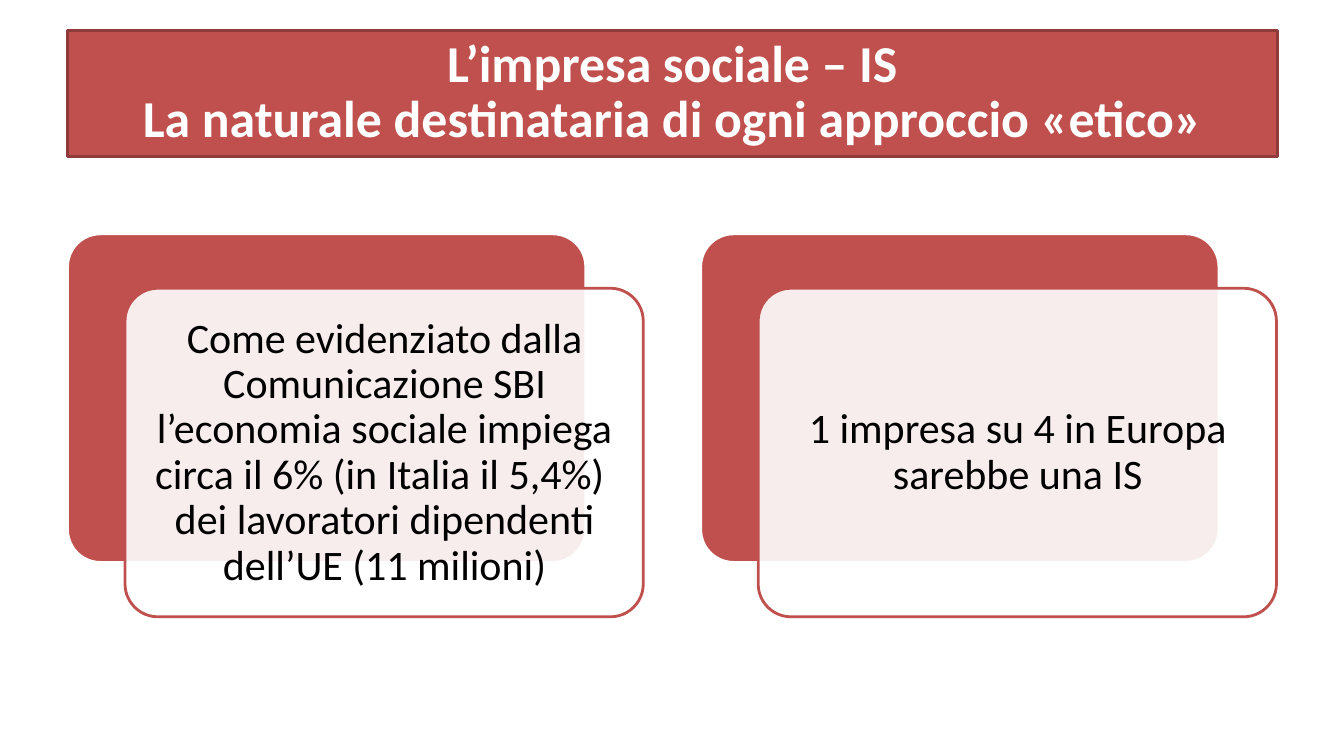
from lxml.etree import SubElement
from pptx import Presentation
from pptx.dml.color import RGBColor
from pptx.enum.shapes import MSO_SHAPE as Shape
from pptx.enum.text import MSO_ANCHOR as Anchor, MSO_AUTO_SIZE as Fit, PP_ALIGN as Align
from pptx.oxml.ns import qn
from pptx.util import Inches, Pt

RED = RGBColor(0xC0, 0x50, 0x4D)
DARK = RGBColor(0x8E, 0x3B, 0x39)
WHITE = RGBColor(0xFF, 0xFF, 0xFF)
BLACK = RGBColor(0x00, 0x00, 0x00)

TITLE = "L’impresa sociale – IS\nLa naturale destinataria di ogni approccio «etico»"
FACTS = [
    "Come evidenziato dalla Comunicazione SBI l’economia sociale impiega "
    "circa il 6% (in Italia il 5,4%)  dei lavoratori dipendenti dell’UE (11 milioni)",
    "1 impresa su 4 in Europa sarebbe una IS",
]


class Deck:
    """Draws the title and the layered cards in one shared style."""

    font = "Calibri"
    width, height = 5.14, 3.26

    def __init__(self, prs):
        self.slide = prs.slides.add_slide(prs.slide_layouts[5])

    def paint(self, shape, fill, line):
        shape.fill.solid()
        shape.fill.fore_color.rgb = fill
        shape.line.color.rgb = line
        shape.line.width = Pt(2)

    def letter(self, shape, text, size, color, bold=False):
        frame = shape.text_frame
        frame.word_wrap = True
        frame.auto_size = Fit.NONE
        frame.vertical_anchor = Anchor.MIDDLE
        para = frame.paragraphs[0]
        para.text = text
        para.alignment = Align.CENTER
        para.line_spacing = 0.9
        font = para.font
        font.name, font.size, font.bold = self.font, Pt(size), bold
        font.color.rgb = color
        return frame

    def title(self, text):
        shape = self.slide.shapes.title
        shape.left, shape.top = Inches(0.67), Inches(0.3)
        shape.width, shape.height = Inches(12), Inches(1.25)
        self.paint(shape, RED, DARK)
        self.letter(shape, text, 37, WHITE, True)

    def panel(self, left, top, fill, line):
        shape = self.slide.shapes.add_shape(
            Shape.ROUNDED_RECTANGLE, Inches(left), Inches(top),
            Inches(self.width), Inches(self.height))
        shape.adjustments[0] = 0.1
        shape.shadow.inherit = False
        self.paint(shape, fill, line)
        return shape

    def label(self, left, top, text):
        box = self.slide.shapes.add_textbox(
            Inches(left), Inches(top), Inches(4.95), Inches(3.07))
        frame = self.letter(box, text, 30, BLACK)
        frame.margin_left = frame.margin_right = Inches(0.12)
        frame.margin_top = frame.margin_bottom = Inches(0.12)

    def card(self, left, top, text):
        self.panel(left, top, RED, WHITE)
        front = self.panel(left + 0.57, top + 0.54, WHITE, RED)
        color = front.element.spPr.find(qn("a:solidFill"))[0]
        SubElement(color, qn("a:alpha"), val="90000")
        self.label(left + 0.67, top + 0.64, text)


def main():
    prs = Presentation()
    prs.slide_width, prs.slide_height = Inches(13.33), Inches(7.5)
    deck = Deck(prs)
    deck.title(TITLE)
    for i, fact in enumerate(FACTS):
        deck.card(0.67 + i * 6.28, 2.32, fact)
    prs.save("out.pptx")


if __name__ == "__main__":
    main()
